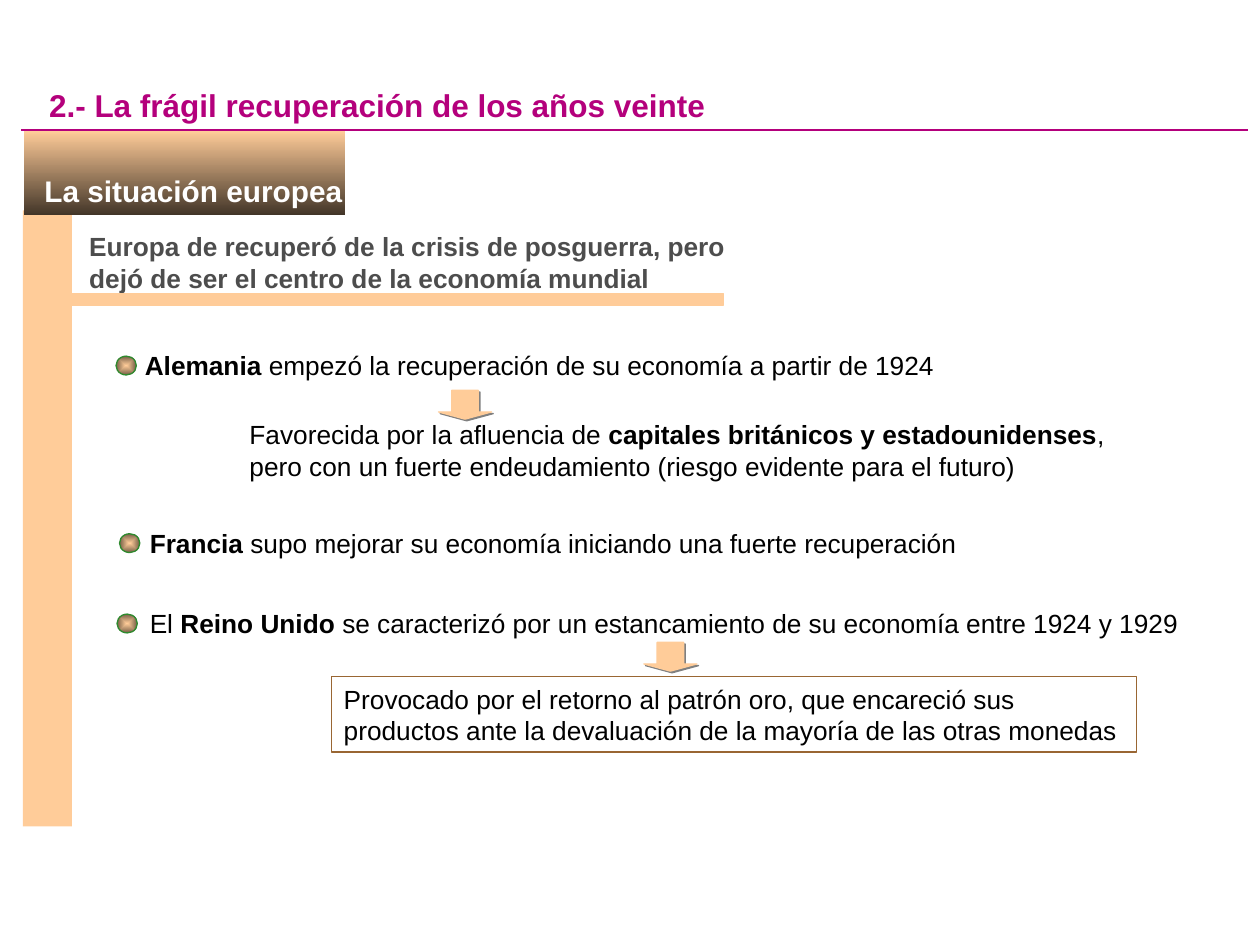
from lxml.etree import SubElement
from pptx import Presentation
from pptx.dml.color import RGBColor
from pptx.enum.shapes import MSO_CONNECTOR, MSO_SHAPE
from pptx.enum.text import MSO_ANCHOR, PP_ALIGN
from pptx.oxml.ns import qn
from pptx.util import Cm, Pt

INK = {"peach": "FFCC99", "dark": "423528", "brown": "755E46", "green": "2E8A2E",
       "pink": "B4007C", "gray": "4D4D4D", "edge": "996633", "shade": "808080",
       "white": "FFFFFF", "black": "000000"}

# Content: runs are (text, bold), lengths in cm
TITLE = [("2.- La frágil recuperación de los años veinte", True)]
TAG = [("La situación europea", True)]
LEAD = [("Europa de recuperó de la crisis de posguerra, pero dejó de ser "
         "el centro de la economía mundial", True)]
# (bullet left, text left, top, width, runs)
POINTS = [
    (2.34, 2.67, 6.91, 16.28,
     [("Alemania", True), (" empezó la recuperación de su economía a partir de 1924", False)]),
    (2.41, 2.77, 10.49, 16.66,
     [("Francia", True), (" supo mejorar su economía iniciando una fuerte recuperación", False)]),
    (2.36, 2.77, 12.11, 21.13,
     [("El ", False), ("Reino Unido", True),
      (" se caracterizó por un estancamiento de su economía entre 1924 y 1929", False)]),
]
CAUSE = [("Favorecida por la afluencia de ", False),
         ("capitales británicos y estadounidenses", True),
         (", pero con un fuerte endeudamiento (riesgo evidente para el futuro)", False)]
GOLD = [("Provocado por el retorno al patrón oro, que encareció sus productos ante "
         "la devaluación de la mayoría de las otras monedas", False)]
ARROWS = [(8.84, 7.87), (12.98, 12.95)]

deck = Presentation()
deck.slide_width, deck.slide_height = Cm(25.4), Cm(19.05)
slide = deck.slides.add_slide(deck.slide_layouts[6])


def color(name):
    return RGBColor.from_string(INK[name])


def shape(kind, box, fill=None, line=None):
    item = slide.shapes.add_shape(kind, *map(Cm, box))
    item.shadow.inherit = False
    if fill:
        item.fill.solid()
        item.fill.fore_color.rgb = color(fill)
    else:
        item.fill.background()
    if line:
        item.line.color.rgb = color(line)
        item.line.width = Pt(0.75)
    else:
        item.line.fill.background()
    return item


def blend(item, *names):
    item.fill.gradient()
    item.fill.gradient_angle = 270
    for stop, name in zip(item.fill.gradient_stops, names):
        stop.color.rgb = color(name)


def write(item, runs, size=15, ink="black", right=0.05, wrap=True):
    frame = item.text_frame
    frame.word_wrap = wrap
    frame.vertical_anchor = MSO_ANCHOR.TOP
    frame.margin_left, frame.margin_right = Cm(0.25), Cm(right)
    frame.margin_top = frame.margin_bottom = Cm(0.13)
    para = frame.paragraphs[0]
    para.alignment = PP_ALIGN.LEFT
    para.font.name, para.font.size = "Arial", Pt(size)
    para.font.color.rgb = color(ink)
    for text, bold in runs:
        run = para.add_run()
        run.text = text
        run.font.bold = bold
    return frame


def label(box, runs, **look):
    write(slide.shapes.add_textbox(*map(Cm, box)), runs, **look)


def bullet(left, top):
    dot = shape(MSO_SHAPE.OVAL, (left, top, 0.41, 0.38), "peach", "green")
    blend(dot, "peach", "brown")
    # Radial gradient from the centre
    grad = dot._element.spPr.find(qn("a:gradFill"))
    grad.remove(grad.find(qn("a:lin")))
    ring = SubElement(grad, qn("a:path"), path="shape")
    SubElement(ring, qn("a:fillToRect"), l="50000", t="50000", r="50000", b="50000")


def arrow(left, top):
    item = shape(MSO_SHAPE.DOWN_ARROW, (left, top, 1.07, 0.58), "peach", "peach")
    item.adjustments[0], item.adjustments[1] = 0.5, 0.25
    cast = SubElement(item._element.spPr.find(qn("a:effectLst")), qn("a:outerShdw"),
                      dist=str(Pt(1.4)), dir="2700000", algn="ctr", rotWithShape="0")
    SubElement(cast, qn("a:srgbClr"), val=INK["shade"])


# Side rail, title and tag
shape(MSO_SHAPE.RECTANGLE, (0.46, 4.24, 0.99, 12.42), "peach")
label((0.74, 1.6, 20.57, 1.02), TITLE, size=18, ink="pink", right=0.25)
tag = shape(MSO_SHAPE.RECTANGLE, (0.48, 2.64, 6.48, 1.7), "peach")
blend(tag, "peach", "dark")
frame = write(tag, TAG, size=17, ink="white")
frame.vertical_anchor = MSO_ANCHOR.BOTTOM
frame.paragraphs[0].alignment = PP_ALIGN.RIGHT

# Title rule
rule = slide.shapes.add_connector(MSO_CONNECTOR.STRAIGHT, Cm(0.43), Cm(2.62), Cm(25.15), Cm(2.62))
rule.line.color.rgb = color("pink")
rule.line.width = Pt(0.75)
SubElement(rule._element.spPr, qn("a:effectLst"))

# Lead sentence and its bar
label((1.55, 4.52, 13.41, 1.52), LEAD, ink="gray")
shape(MSO_SHAPE.RECTANGLE, (1.4, 5.92, 13.18, 0.23), "peach", "peach")

# Countries
for dot, left, top, width, runs in POINTS:
    bullet(dot, top + 0.27)
    label((left, top, width, 0.89), runs, wrap=False)

# Explanations
for spot in ARROWS:
    arrow(*spot)
label((4.78, 8.31, 17.6, 1.52), CAUSE)
write(shape(MSO_SHAPE.RECTANGLE, (6.68, 13.64, 16.23, 1.52), line="edge"), GOLD)

deck.save("out.pptx")
